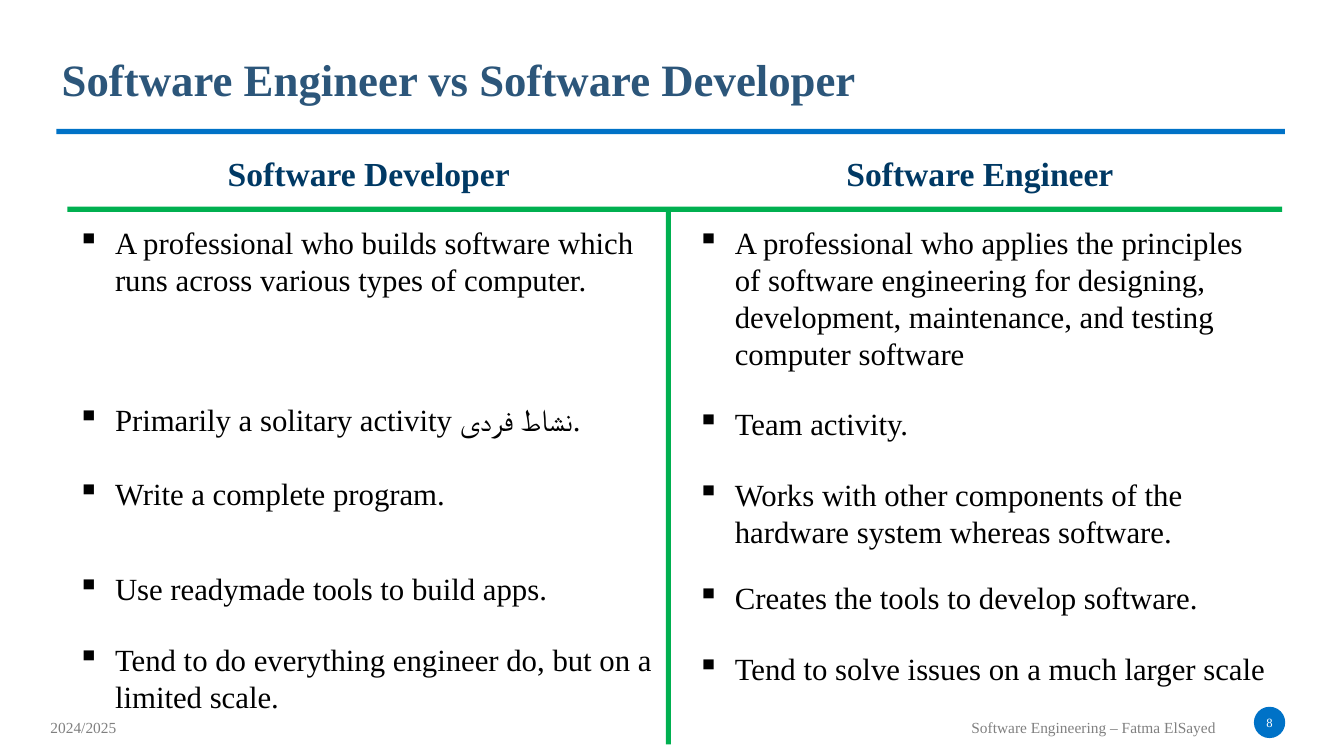
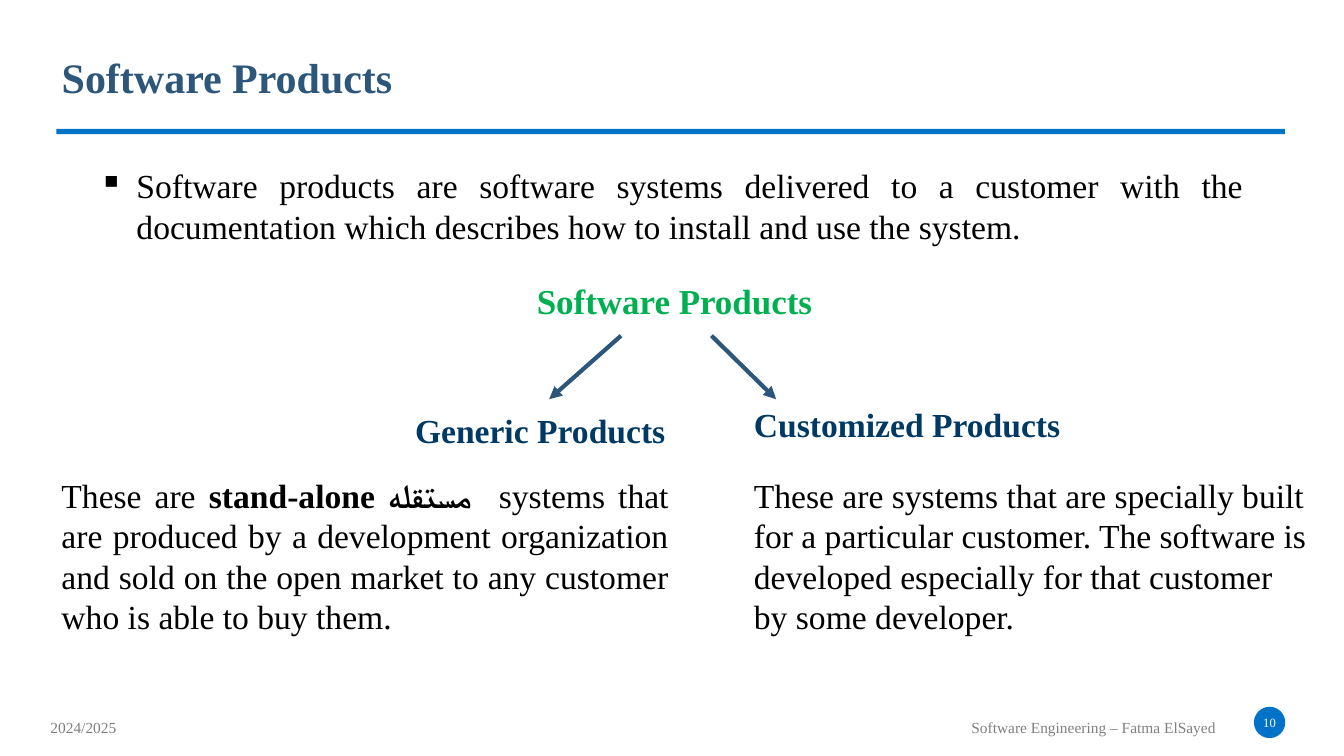
from lxml import etree
from pptx import Presentation
from pptx.dml.color import RGBColor
from pptx.enum.shapes import MSO_CONNECTOR, MSO_SHAPE
from pptx.enum.text import MSO_ANCHOR, MSO_AUTO_SIZE, PP_ALIGN
from pptx.oxml.ns import qn
from pptx.util import Cm, Pt

FONT = "Times New Roman"
BLUE = RGBColor(0x00, 0x72, 0xC7)
SLATE = RGBColor(0x2C, 0x56, 0x7A)
NAVY = RGBColor(0x00, 0x39, 0x64)
GREEN = RGBColor(0x00, 0xB0, 0x50)
GRAY = RGBColor(0x80, 0x80, 0x80)
BLACK = RGBColor(0x00, 0x00, 0x00)
WHITE = RGBColor(0xFF, 0xFF, 0xFF)

RECTANGLE, OVAL = MSO_SHAPE.RECTANGLE, MSO_SHAPE.OVAL
STRAIGHT = MSO_CONNECTOR.STRAIGHT
LEFT, CENTER, JUSTIFY = PP_ALIGN.LEFT, PP_ALIGN.CENTER, PP_ALIGN.JUSTIFY
TOP, MIDDLE = MSO_ANCHOR.TOP, MSO_ANCHOR.MIDDLE
NO_FIT, FIT_SHAPE = MSO_AUTO_SIZE.NONE, MSO_AUTO_SIZE.SHAPE_TO_FIT_TEXT

TITLE_ONLY = 5
BAR = 0.13
INDENT = Cm(0.95)
TITLE_SPACE = Pt(6.4)

DEVELOPER_POINTS = [
    ("A professional who builds software which runs across various types of computer.", 74),
    ("Primarily a solitary activity نشاط فردى.", 26),
    ("Write a complete program.", 42),
    ("Use readymade tools to build apps.", 24),
    ("Tend to do everything engineer do, but on a limited scale.", 0),
]
ENGINEER_POINTS = [
    ("A professional who applies the principles of software engineering for designing, "
     "development, maintenance, and testing computer software", 24),
    ("Team activity.", 24),
    ("Works with other components of the hardware system whereas software.", 21),
    ("Creates the tools to develop software.", 24),
    ("Tend to solve issues on a much larger scale", 0),
]


def style(para, size, color, bold=False, align=LEFT):
    """Set the font and alignment of a paragraph."""
    para.alignment = align
    para.font.name = FONT
    para.font.size = Pt(size)
    para.font.bold = bold
    para.font.color.rgb = color


def add_bullet(para):
    """Give a paragraph a square bullet with a hanging indent."""
    properties = para._p.get_or_add_pPr()
    properties.set("marL", str(INDENT))
    properties.set("indent", str(-INDENT))
    etree.SubElement(properties, qn("a:buChar")).set("char", "▪")


def add_shape(page, kind, left, top, width, height, color):
    """Add a plain filled shape."""
    shape = page.shapes.add_shape(kind, Cm(left), Cm(top), Cm(width), Cm(height))
    shape.shadow.inherit = False
    shape.fill.solid()
    shape.fill.fore_color.rgb = color
    shape.line.fill.background()
    return shape


def add_box(page, left, top, width, height):
    """Add an empty wrapping text box and return its text frame."""
    frame = page.shapes.add_textbox(Cm(left), Cm(top), Cm(width), Cm(height)).text_frame
    frame.word_wrap = True
    return frame


def add_label(page, text, left, top, width, height, size, color, bold=True):
    """Add a one-line text that does not wrap."""
    frame = add_box(page, left, top, width, height)
    frame.word_wrap = False
    frame.auto_size = FIT_SHAPE
    para = frame.paragraphs[0]
    para.text = text
    style(para, size, color, bold)


def add_body(page, spans, left, top, width, align=LEFT):
    """Add a body paragraph from (text, bold) spans."""
    para = add_box(page, left, top, width, 4.37).paragraphs[0]
    style(para, 24, BLACK, align=align)
    for text, bold in spans:
        span = para.add_run()
        span.text = text
        if bold:
            span.font.bold = True


def add_bullets(page, points, left, top, width, height, size, align=LEFT):
    """Add a bulleted list from (text, space after) points."""
    frame = add_box(page, left, top, width, height)
    for index, (text, space) in enumerate(points):
        para = frame.add_paragraph() if index else frame.paragraphs[0]
        para.text = text
        add_bullet(para)
        para.space_after = Pt(space)
        style(para, size, BLACK, align=align)
    return frame


def add_arrow(page, start, end):
    """Add a straight arrow between two points."""
    arrow = page.shapes.add_connector(STRAIGHT, *map(Cm, start + end))
    arrow.line.color.rgb = SLATE
    arrow.line.width = Pt(3)
    etree.SubElement(arrow.line._get_or_add_ln(), qn("a:tailEnd")).set("type", "triangle")
    etree.SubElement(arrow._element.spPr, qn("a:effectLst"))


def add_page(deck, title, title_size, number):
    """Add a slide with its title, rule, footer texts and page number."""
    page = deck.slides.add_slide(deck.slide_layouts[TITLE_ONLY])
    holder = page.shapes.title
    holder.left, holder.top, holder.width, holder.height = map(Cm, (1.3, 1.17, 31.6, 1.63))
    frame = holder.text_frame
    frame.text = title
    frame.vertical_anchor = TOP
    frame.auto_size = NO_FIT
    frame.paragraphs[0].space_before = TITLE_SPACE
    style(frame.paragraphs[0], title_size, SLATE, bold=True)

    add_shape(page, RECTANGLE, 1.42, 3.25, 30.96, BAR, BLUE)
    add_label(page, "Software Engineering – Fatma ElSayed", 24.23, 17.96, 6.71, 0.74, 11, GRAY, False)
    add_label(page, "2024/2025", 1.02, 17.96, 2.18, 0.74, 11, GRAY, False)
    badge = add_shape(page, OVAL, 31.6, 17.81, 0.79, 0.79, BLUE).text_frame
    badge.margin_left = badge.margin_right = badge.margin_top = badge.margin_bottom = 0
    badge.word_wrap = False
    badge.vertical_anchor = MIDDLE
    badge.text = str(number)
    style(badge.paragraphs[0], 9, WHITE, align=CENTER)
    return page


def build_comparison(deck):
    """Build the two-column comparison slide."""
    page = add_page(deck, "Software Engineer vs Software Developer", 32, 8)
    add_shape(page, RECTANGLE, 1.7, 5.21, 30.61, BAR, GREEN)
    add_shape(page, RECTANGLE, 16.78, 5.3, BAR, 13.46, GREEN)
    add_label(page, "Software Developer", 5.49, 3.72, 7.7, 1.27, 24, NAVY)
    add_label(page, "Software Engineer", 21.08, 3.72, 7.32, 1.27, 24, NAVY)
    for points, left in ((DEVELOPER_POINTS, 1.7), (ENGINEER_POINTS, 17.32)):
        add_bullets(page, points, left, 5.51, 15.06, 13.4, 22)


def build_products(deck):
    """Build the slide on the two kinds of software product."""
    page = add_page(deck, "Software Products", 30, 10)
    definition = ("Software products are software systems delivered to a customer with the "
                  "documentation which describes how to install and use the system.")
    frame = add_bullets(page, [(definition, 0)], 2.24, 4.04, 29.34, 2.31, 24, JUSTIFY)
    frame.paragraphs[0].space_before = TITLE_SPACE

    add_label(page, "Software Products", 13.28, 6.93, 7.54, 1.32, 25, GREEN)
    add_arrow(page, (15.65, 8.46), (13.84, 10.06))
    add_arrow(page, (17.93, 8.46), (19.56, 10.06))
    add_label(page, "Generic Products", 10.21, 10.21, 6.88, 1.27, 24, NAVY)
    add_label(page, "Customized Products", 18.75, 10.06, 8.31, 1.27, 24, NAVY)
    add_body(page, [
        ("These are ", False),
        ("stand-alone مستقله ", True),
        (" systems that are produced by a development organization and sold on the "
         "open market to any customer who is able to buy them.", False),
    ], 1.3, 11.84, 15.8, JUSTIFY)
    add_body(page, [
        ("These are systems that are specially built for a particular customer. The software "
         "is developed especially for that customer by some developer.", False),
    ], 18.75, 11.84, 14.5)


def main():
    """Build and save the deck."""
    deck = Presentation()
    deck.slide_width, deck.slide_height = Cm(33.87), Cm(19.05)
    build_comparison(deck)
    build_products(deck)
    deck.save("out.pptx")


if __name__ == "__main__":
    main()
